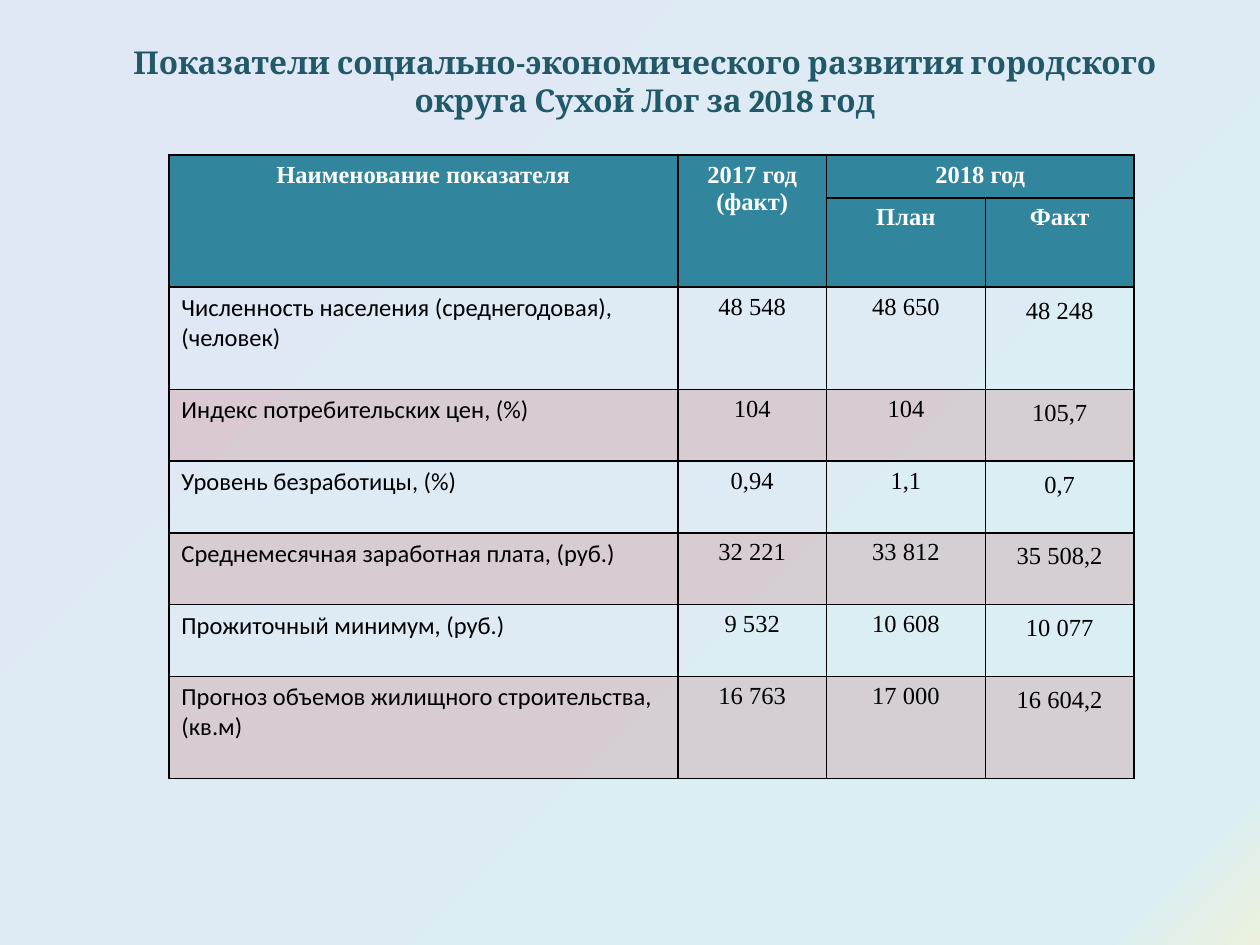
import pptx
import pptx.dml.color
import pptx.enum.text
import pptx.oxml
import pptx.oxml.ns
import pptx.util
from lxml import etree
from pptx.util import Inches

COLORS = {
    "title": "215968",
    "header": "31859C",
    "header_text": "FFFFFF",
    "text": "000000",
    "border": "000000",
    "band": "C0504D",
}
BACKGROUND_STOPS = [(0, "EBF1DE"), (8, "DBEEF4"), (100, "E1E8F5")]
TITLE = "Показатели социально-экономического развития городского округа Сухой Лог за 2018 год"
COLUMN_WIDTHS = [4.04, 1.18, 1.26, 1.18]
ROW_HEIGHTS = [0.34, 0.71, 0.81, 0.57, 0.57, 0.57, 0.57, 0.81]
HEADERS = [
    ["Наименование показателя", "2017 год (факт)", "2018 год", ""],
    ["", "", "План", "Факт"],
]
INDICATORS = [
    ["Численность населения (среднегодовая), (человек)", "48 548", "48 650", "48 248"],
    ["Индекс потребительских цен, (%)", "104", "104", "105,7"],
    ["Уровень безработицы, (%)", "0,94", "1,1", "0,7"],
    ["Среднемесячная заработная плата, (руб.)", "32 221", "33 812", "35 508,2"],
    ["Прожиточный минимум, (руб.)", "9 532", "10 608", "10 077"],
    ["Прогноз объемов жилищного строительства, (кв.м)", "16 763", "17 000", "16 604,2"],
]
ALIGN = pptx.enum.text.PP_ALIGN
qn = pptx.oxml.ns.qn


def rgb(name):
    return pptx.dml.color.RGBColor.from_string(COLORS[name])


def set_font(para, name, size, color, bold):
    para.font.name = name
    para.font.size = pptx.util.Pt(size)
    para.font.color.rgb = rgb(color)
    para.font.bold = bold


def paint_background(page):
    fill = page.background.fill
    fill.gradient()
    gradient = page.element.find(".//" + qn("a:gradFill"))
    stops = gradient.find(qn("a:gsLst"))
    for stop in list(stops):
        stops.remove(stop)
    for position, color in BACKGROUND_STOPS:
        stop = etree.SubElement(stops, qn("a:gs"), pos=str(position * 1000))
        etree.SubElement(stop, qn("a:srgbClr"), val=color)
    direction = gradient.find(qn("a:lin"))
    direction.set("ang", str(225 * 60000))
    direction.set("scaled", "0")


def place_title(page, left, top, width, height):
    box = page.shapes.title
    box.left, box.top, box.width, box.height = left, top, width, height
    frame = box.text_frame
    frame.word_wrap = True
    frame.auto_size = pptx.enum.text.MSO_AUTO_SIZE.NONE
    frame.vertical_anchor = pptx.enum.text.MSO_ANCHOR.TOP
    frame.text = TITLE
    para = frame.paragraphs[0]
    para.alignment = ALIGN.CENTER
    set_font(para, "Cambria", 18, "title", True)


def add_borders(cell):
    properties = cell._tc.get_or_add_tcPr()
    for side in ("a:lnL", "a:lnR", "a:lnT", "a:lnB"):
        line = etree.SubElement(properties, qn(side), w=str(pptx.util.Pt(1)))
        fill = etree.SubElement(line, qn("a:solidFill"))
        etree.SubElement(fill, qn("a:srgbClr"), val=COLORS["border"])


def fill_cell(cell, color, opacity=100):
    if color is None:
        cell.fill.background()
        return
    cell.fill.solid()
    cell.fill.fore_color.rgb = rgb(color)
    if opacity < 100:
        tint = cell._tc.tcPr.find(qn("a:solidFill")).find(qn("a:srgbClr"))
        etree.SubElement(tint, qn("a:alpha"), val=str(opacity * 1000))


def write_header_cell(cell, text):
    fill_cell(cell, "header")
    cell.text = text
    para = cell.text_frame.paragraphs[0]
    para.alignment = ALIGN.CENTER
    set_font(para, "Times New Roman", 14, "header_text", True)


def write_indicator_cell(cell, text, column, banded):
    fill_cell(cell, "band" if banded else None, 20)
    cell.text = text
    para = cell.text_frame.paragraphs[0]
    para.alignment = ALIGN.CENTER if column else ALIGN.LEFT
    set_font(para, "Times New Roman" if column else "Calibri", 14, "text", False)
    if column == len(COLUMN_WIDTHS) - 1:
        para.line_spacing = 1.15


def place_table(page, left, top, width, height):
    table = page.shapes.add_table(
        len(ROW_HEIGHTS), len(COLUMN_WIDTHS), left, top, width, height
    ).table
    table.first_row = False
    table.horz_banding = False
    for column, size in zip(table.columns, COLUMN_WIDTHS):
        column.width = Inches(size)
    for row, size in zip(table.rows, ROW_HEIGHTS):
        row.height = Inches(size)

    for r, texts in enumerate(HEADERS + INDICATORS):
        for c, text in enumerate(texts):
            cell = table.cell(r, c)
            add_borders(cell)
            if r < len(HEADERS):
                write_header_cell(cell, text)
            else:
                write_indicator_cell(cell, text, c, r % 2 == 1)

    # Header spans
    for first, last in [((0, 0), (1, 0)), ((0, 1), (1, 1)), ((0, 2), (0, 3))]:
        table.cell(*first).merge(table.cell(*last))


def main():
    deck = pptx.Presentation()
    deck.slide_width, deck.slide_height = Inches(10), Inches(7.5)
    page = deck.slides.add_slide(deck.slide_layouts.get_by_name("Title Only"))
    paint_background(page)
    place_title(page, Inches(0.67), Inches(0.29), Inches(8.9), Inches(0.71))
    place_table(page, Inches(1.34), Inches(1.23), Inches(7.66), Inches(4.95))
    deck.save("out.pptx")


if __name__ == "__main__":
    main()
